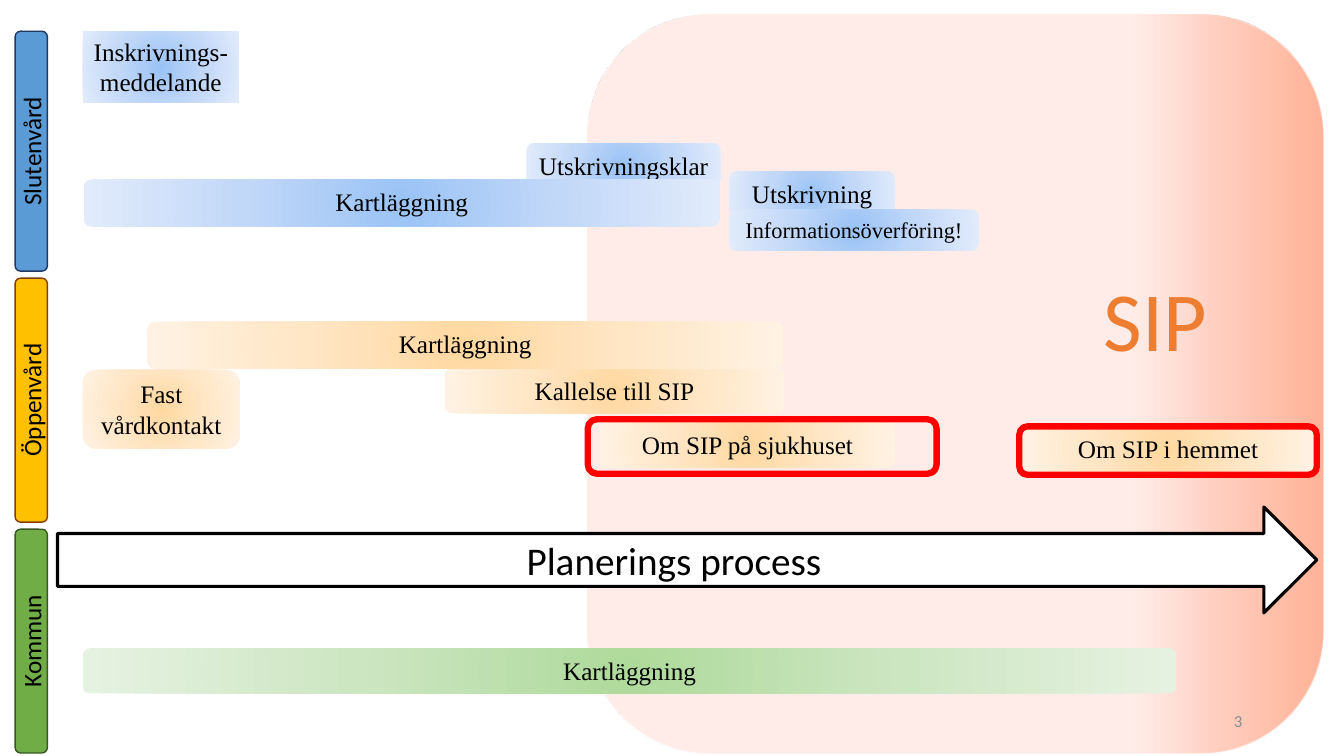
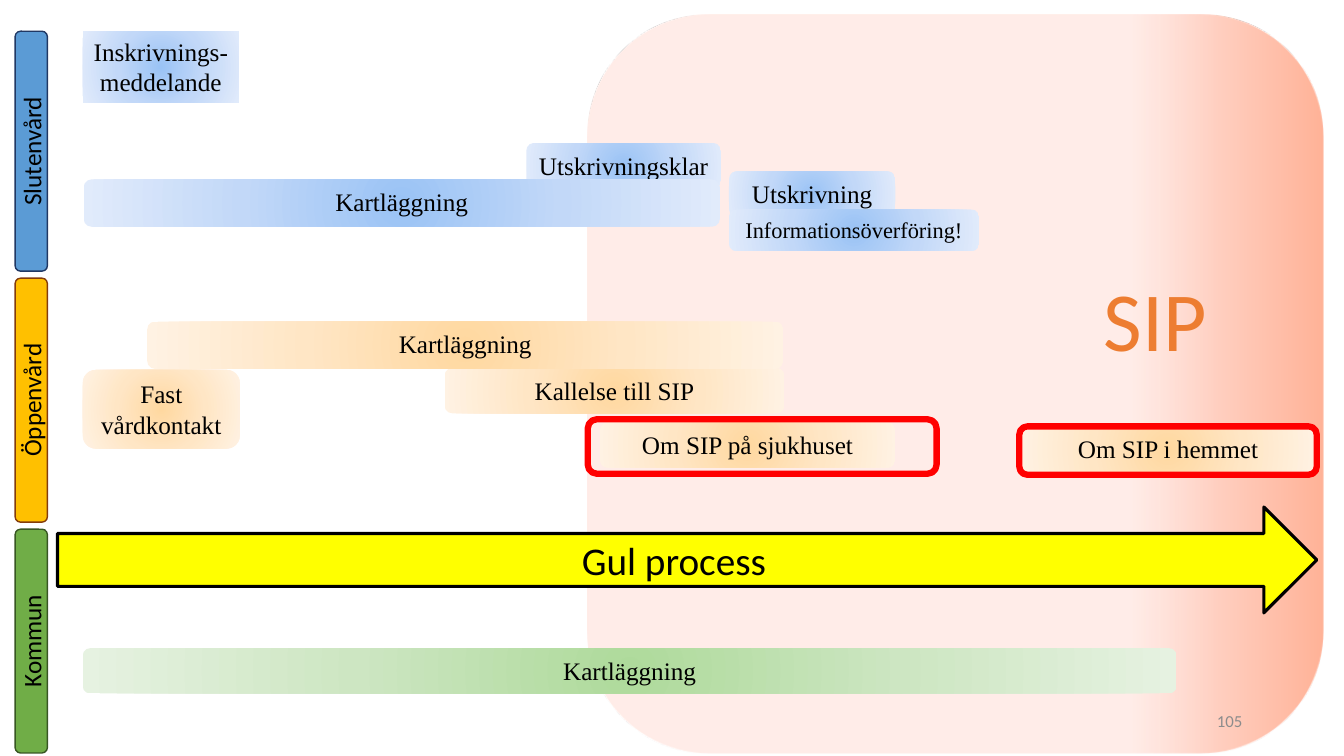
"""Build two care planning slides that differ in process arrow and page number."""
import lxml.etree
import pptx
import pptx.dml.color
import pptx.enum.shapes
import pptx.enum.text
import pptx.oxml.ns
import pptx.util

Inches = pptx.util.Inches
Pt = pptx.util.Pt
qn = pptx.oxml.ns.qn
SHAPE = pptx.enum.shapes.MSO_SHAPE
ALIGN = pptx.enum.text.PP_ALIGN
ANCHOR = pptx.enum.text.MSO_ANCHOR
AUTO_SIZE = pptx.enum.text.MSO_AUTO_SIZE

COLOURS = {
    "black": "000000", "white": "FFFFFF", "yellow": "FFFF00", "red": "FF0000",
    "orange": "ED7D31", "grey": "8C8C8C",
    "hospital": "5B9BD5", "hospital line": "203864",
    "outpatient": "FFC000", "outpatient line": "843C0B",
    "municipal": "70AD47", "municipal line": "385723",
}
GRADIENTS = {
    "panel": [(0, "FFB297", 100), (14, "FFCEBF", 100), (26, "FFE6E0", 75)],
    "hospital": [(0, "9AC3F5", 100), (50, "C2D8F8", 100), (100, "E1EBFB", 100)],
    "outpatient": [(0, "FFD8A0", 100), (50, "FFE6C5", 100), (100, "FFF2E3", 100)],
    "municipal": [(0, "AEDA9B", 100), (50, "CDE6C2", 100), (100, "E6F2E1", 100)],
}

SLIDES = [
    {"process": "Planerings process", "fill": "white", "number": "3"},
    {"process": "Gul process", "fill": "yellow", "number": "105"},
]
LANES = [("Slutenvård", "hospital", 2.38), ("Öppenvård", "outpatient", 2.42), ("Kommun", "municipal", 2.22)]
LANE_LEFT, LANE_TOP, LANE_WIDTH, LANE_GAP = 0.15, 0.31, 0.32, 0.07

STEPS = [
    ("Kartläggning", "municipal", (0.82, 6.43, 10.85, 0.45)),
    ("Fast vårdkontakt", "outpatient", (0.82, 3.67, 1.56, 0.78)),
    ("Utskrivningsklar", "hospital", (5.22, 1.42, 1.93, 0.45)),
    ("Utskrivning", "hospital", (7.23, 1.7, 1.65, 0.45)),
    ("Kallelse till SIP", "outpatient", (4.41, 3.65, 3.37, 0.45)),
    ("Kartläggning", "hospital", (0.83, 1.78, 6.31, 0.47)),
    ("Inskrivnings-meddelande", "hospital", (0.82, 0.31, 1.55, 0.71)),
    ("Kartläggning", "outpatient", (1.46, 3.19, 6.31, 0.47)),
    ("Informationsöverföring!", "hospital", (7.23, 2.08, 2.48, 0.41)),
    ("Om SIP i hemmet", "outpatient", (10.11, 4.23, 2.95, 0.45)),
    ("Om SIP på sjukhuset", "outpatient", (5.95, 4.19, 2.93, 0.45)),
]
SQUARE_STEPS = {"Inskrivnings-meddelande"}
SMALL_STEPS = {"Informationsöverföring!"}
FRAMES = [(5.83, 4.16, 3.46, 0.54), (10.11, 4.23, 2.95, 0.48)]

PANEL_BOX = (5.83, 0.15, 7.3, 7.33)
ARROW_BOX = (0.57, 5.03, 12.49, 1.05)
NUMBER_BOX = (9.42, 6.95, 3, 0.4)
PANEL_FORMAT = {"margin_left": Inches(4.06), "margin_bottom": Inches(1.37)}
STEP_FORMAT = {"vertical_anchor": ANCHOR.TOP, "auto_size": AUTO_SIZE.SHAPE_TO_FIT_TEXT}


def rgb(name):
    return pptx.dml.color.RGBColor.from_string(COLOURS[name])


def add_box(slide, kind, box, fill=None, line=None, line_width=1):
    shape = slide.shapes.add_shape(kind, *map(Inches, box))
    shape.shadow.inherit = False
    if fill:
        shape.fill.solid()
        shape.fill.fore_color.rgb = rgb(fill)
    else:
        shape.fill.background()
    if line:
        shape.line.color.rgb = rgb(line)
        shape.line.width = Pt(line_width)
    else:
        shape.line.fill.background()
    return shape


def set_gradient(shape, name, circular=True):
    shape.fill.gradient()
    gradient = shape.element.spPr.find(qn("a:gradFill"))
    gradient.clear()
    add = lxml.etree.SubElement
    stops = add(gradient, qn("a:gsLst"))
    for position, colour, opacity in GRADIENTS[name]:
        stop = add(stops, qn("a:gs"), pos=str(position * 1000))
        value = add(stop, qn("a:srgbClr"), val=colour)
        if opacity < 100:
            add(value, qn("a:alpha"), val=str(opacity * 1000))
    if circular:
        route = add(gradient, qn("a:path"), path="circle")
        add(route, qn("a:fillToRect"), **dict.fromkeys("ltrb", "50000"))
    else:
        add(gradient, qn("a:lin"), ang=str(180 * 60000), scaled="0")


def write_text(shape, text, size, colour="black", font="Calibri", align=ALIGN.CENTER, **frame_format):
    frame = shape.text_frame
    for name, value in {"word_wrap": True, "vertical_anchor": ANCHOR.MIDDLE, **frame_format}.items():
        setattr(frame, name, value)
    paragraph = frame.paragraphs[0]
    paragraph.alignment = align
    run = paragraph.add_run()
    run.text = text
    for name, value in {"name": font, "size": Pt(size)}.items():
        setattr(run.font, name, value)
    run.font.color.rgb = rgb(colour)


def add_panel(slide):
    panel = add_box(slide, SHAPE.ROUNDED_RECTANGLE, PANEL_BOX)
    set_gradient(panel, "panel", circular=False)
    write_text(panel, "SIP", 60, "orange", **PANEL_FORMAT)


def add_lanes(slide):
    top = LANE_TOP
    for text, colour, height in LANES:
        box = (LANE_LEFT, top, LANE_WIDTH, height)
        lane = add_box(slide, SHAPE.ROUNDED_RECTANGLE, box, colour, f"{colour} line")
        write_text(lane, text, 18)
        lane.element.txBody.find(qn("a:bodyPr")).set("vert", "vert270")
        top += height + LANE_GAP


def add_steps(slide):
    for text, colour, box in STEPS:
        kind = SHAPE.RECTANGLE if text in SQUARE_STEPS else SHAPE.ROUNDED_RECTANGLE
        step = add_box(slide, kind, box)
        set_gradient(step, colour)
        write_text(step, text, 16 if text in SMALL_STEPS else 18, font="Times New Roman", **STEP_FORMAT)


def build_slide(presentation, content):
    slide = presentation.slides.add_slide(presentation.slide_layouts[6])
    add_panel(slide)
    number = slide.shapes.add_textbox(*map(Inches, NUMBER_BOX))
    write_text(number, content["number"], 12, "grey", align=ALIGN.RIGHT)
    arrow = add_box(slide, SHAPE.RIGHT_ARROW, ARROW_BOX, content["fill"], "black", 2.25)
    write_text(arrow, content["process"], 28)
    add_lanes(slide)
    add_steps(slide)
    for box in FRAMES:
        add_box(slide, SHAPE.ROUNDED_RECTANGLE, box, line="red", line_width=4.5)


def main():
    presentation = pptx.Presentation()
    presentation.slide_width = Inches(13.33)
    presentation.slide_height = Inches(7.5)
    for content in SLIDES:
        build_slide(presentation, content)
    presentation.save("out.pptx")


if __name__ == "__main__":
    main()
